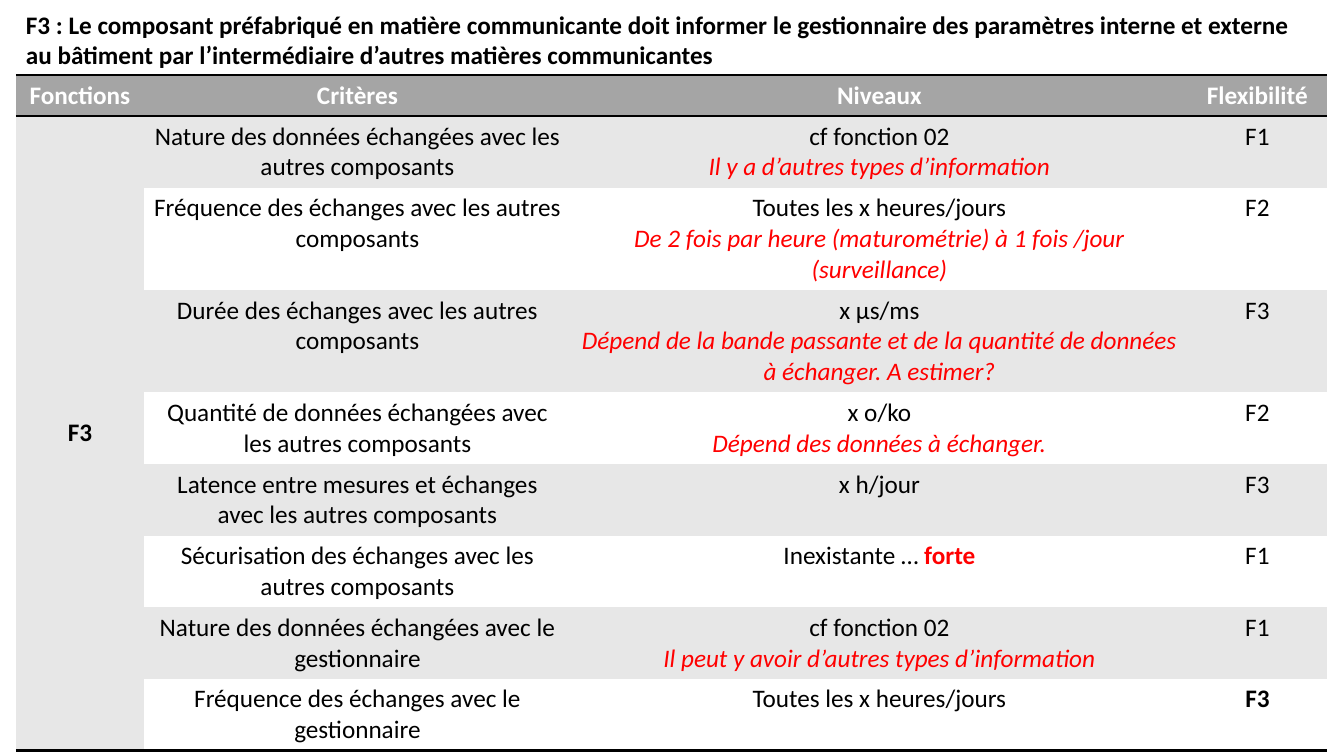
from lxml import etree
from pptx import Presentation
from pptx.dml.color import RGBColor
from pptx.enum.text import MSO_ANCHOR, PP_ALIGN
from pptx.oxml import parse_xml
from pptx.oxml.ns import qn
from pptx.util import Emu, Pt

CENTER = PP_ALIGN.CENTER
LEFT = PP_ALIGN.LEFT
TOP = MSO_ANCHOR.TOP
MIDDLE = MSO_ANCHOR.MIDDLE
PX = 914400 / 100.8
NO_GRID = "{2D5ABB26-0587-4C30-8999-92F81FD0307C}"
NS = "http://schemas.openxmlformats.org/drawingml/2006/main"
COLORS = {
    "black": "000000",
    "white": "FFFFFF",
    "red": "FF0000",
    "header": "A5A5A5",
    "band": "E7E7E7",
}
STYLES = {
    "plain": ("black", False, False),
    "bold": ("black", True, False),
    "header": ("white", True, False),
    "note": ("red", False, True),
    "strong": ("red", True, False),
}

TITLE = (
    "F3 : Le composant préfabriqué en matière communicante doit informer "
    "le gestionnaire des paramètres interne et externe au bâtiment par "
    "l’intermédiaire d’autres matières communicantes"
)
HEADERS = ["Fonctions", "Critères", "Niveaux", "Flexibilité"]
COLUMN_WIDTHS = [128, 427, 617, 139]
CRITERIA = [
    ("Nature des données échangées avec les autres composants",
     "cf fonction 02", "Il y a d’autres types d’information", "F1", 2),
    ("Fréquence des échanges avec les autres composants",
     "Toutes les x heures/jours",
     "De 2 fois par heure (maturométrie) à 1 fois /jour (surveillance)", "F2", 3),
    ("Durée des échanges avec les autres composants", "x µs/ms",
     "Dépend de la bande passante et de la quantité de données à échanger. A estimer?",
     "F3", 3),
    ("Quantité de données échangées avec les autres composants",
     "x o/ko", "Dépend des données à échanger.", "F2", 2),
    ("Latence entre mesures et échanges avec les autres composants",
     "x h/jour", None, "F3", 2),
    ("Sécurisation des échanges avec les autres composants",
     [("Inexistante … ", "plain"), ("forte", "strong")], None, "F1", 2),
    ("Nature des données échangées avec le gestionnaire",
     "cf fonction 02", "Il peut y avoir d’autres types d’information", "F1", 2),
    ("Fréquence des échanges avec le gestionnaire",
     "Toutes les x heures/jours", None, [("F3", "bold")], 2),
]


def px(n):
    return Emu(round(n * PX))


def rgb(name):
    return RGBColor.from_string(COLORS[name])


class SlideBuilder:
    def __init__(self, slide, font="Calibri", size=18):
        self.slide = slide
        self.font = font
        self.size = size

    def fill_text(self, tf, paragraphs, align):
        for i, runs in enumerate(paragraphs):
            p = tf.paragraphs[0] if i == 0 else tf.add_paragraph()
            p.alignment = align
            for text, style in runs:
                r = p.add_run()
                r.text = text
                color, bold, italic = STYLES[style]
                r.font.name = self.font
                r.font.size = Pt(self.size)
                r.font.color.rgb = rgb(color)
                r.font.bold = bold
                r.font.italic = italic

    def text(self, x, y, w, h, paragraphs):
        tf = self.slide.shapes.add_textbox(px(x), px(y), px(w), px(h)).text_frame
        tf.word_wrap = True
        self.fill_text(tf, paragraphs, LEFT)

    def table(self, x, y, widths, heights):
        frame = self.slide.shapes.add_table(
            len(heights), len(widths), px(x), px(y), px(sum(widths)), px(sum(heights)))
        table = frame.table
        table.horz_banding = False
        table._tbl.tblPr.find(qn("a:tableStyleId")).text = NO_GRID
        for column, width in zip(table.columns, widths):
            column.width = px(width)
        for row, height in zip(table.rows, heights):
            row.height = px(height)
        return table

    def cell(self, cell, paragraphs, fill, anchor=TOP, borders=()):
        cell.fill.solid()
        cell.fill.fore_color.rgb = rgb(fill)
        cell.vertical_anchor = anchor
        self.fill_text(cell.text_frame, paragraphs, CENTER)
        for i, side in enumerate(borders):
            line = parse_xml(f'<a:ln{side} xmlns:a="{NS}" w="{Pt(2)}"/>')
            solid = etree.SubElement(line, qn("a:solidFill"))
            etree.SubElement(solid, qn("a:srgbClr"), val=COLORS["black"])
            cell._tc.get_or_add_tcPr().insert(i, line)


def as_runs(value):
    return [(value, "plain")] if isinstance(value, str) else value


def main():
    prs = Presentation()
    prs.slide_width, prs.slide_height = px(1344), px(756)
    s = SlideBuilder(prs.slides.add_slide(prs.slide_layouts[6]))

    heights = [41] + [11 + 30 * row[-1] for row in CRITERIA]
    table = s.table(16, 75, COLUMN_WIDTHS, heights)
    for c, header in enumerate(HEADERS):
        s.cell(table.cell(0, c), [[(header, "header")]], "header", borders="TB")

    last = len(CRITERIA)
    for r, (criterion, level, note, flexibility, _) in enumerate(CRITERIA, 1):
        fill = "band" if r % 2 else "white"
        borders = "B" if r == last else ""
        levels = [as_runs(level)] + ([[(note, "note")]] if note else [])
        columns = [[as_runs(criterion)], levels, [as_runs(flexibility)]]
        for c, paragraphs in enumerate(columns, 1):
            s.cell(table.cell(r, c), paragraphs, fill, borders=borders)
        function = [[("F3", "bold")]] if r == 1 else []
        s.cell(table.cell(r, 0), function, "band", MIDDLE,
               "B" if r in (1, last) else "")
    table.cell(1, 0).merge(table.cell(last, 0))

    s.text(16, 4, 1311, 71, [[(TITLE, "bold")]])
    prs.save("out.pptx")


if __name__ == "__main__":
    main()
